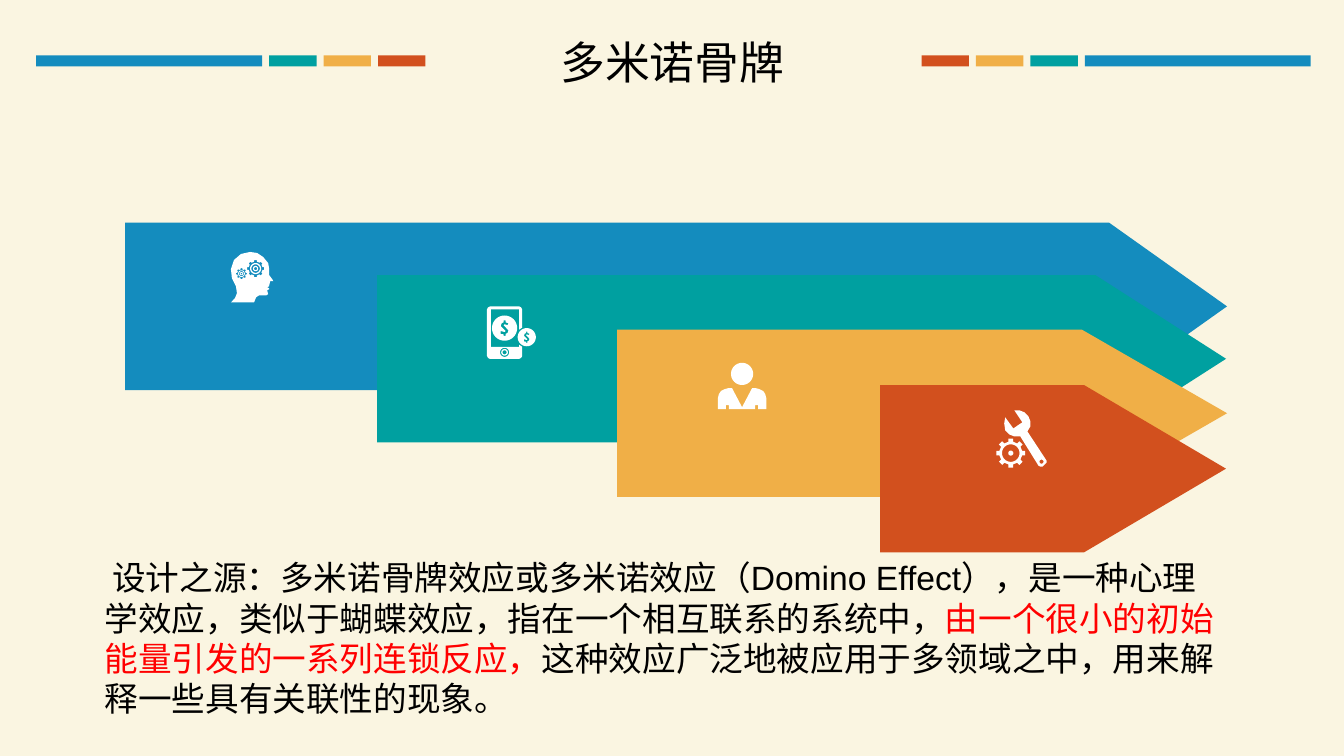
"""Build the domino effect slide: four stacked arrows with icons and an explanation."""
from dataclasses import dataclass
from math import cos, pi, sin

from lxml.etree import SubElement
from pptx import Presentation
from pptx.dml.color import RGBColor
from pptx.enum.shapes import MSO_SHAPE
from pptx.enum.text import MSO_ANCHOR, PP_ALIGN
from pptx.oxml.ns import qn
from pptx.shapes.autoshape import Shape
from pptx.shapes.shapetree import SlideShapes
from pptx.text.text import _Paragraph
from pptx.util import Pt

PX = 9144
CREAM = RGBColor(0xFA, 0xF5, 0xE1)
BLUE = RGBColor(0x14, 0x8C, 0xBE)
TEAL = RGBColor(0x00, 0xA0, 0xA0)
AMBER = RGBColor(0xF0, 0xAF, 0x47)
RUST = RGBColor(0xD2, 0x50, 0x1E)
WHITE = RGBColor(0xFF, 0xFF, 0xFF)
BLACK = RGBColor(0x00, 0x00, 0x00)
RED = RGBColor(0xFF, 0x00, 0x00)
CHINESE_FONT = "Noto Sans CJK SC"

Contour = list[tuple[float, float]]


@dataclass(frozen=True)
class Bar:
    left: int
    width: int
    colour: RGBColor


@dataclass(frozen=True)
class Arrow:
    left: int
    top: int
    width: int
    point: float
    colour: RGBColor
    icon: list[Contour]


@dataclass(frozen=True)
class Phrase:
    text: str
    font: str = "Arial"
    colour: RGBColor = BLACK


def circle(x: float, y: float, radius: float) -> Contour:
    steps = [2 * pi * step / 40 for step in range(40)]
    return [(x + radius * cos(a), y + radius * sin(a)) for a in steps]


def gear(x: float, y: float, tip: float, root: float) -> Contour:
    teeth = 8
    corners = ((-0.2, tip), (0.2, tip), (0.25, root), (0.75, root))
    turns = [(2 * pi * (tooth + part) / teeth, radius)
             for tooth in range(teeth) for part, radius in corners]
    return [(x + radius * cos(a), y + radius * sin(a)) for a, radius in turns]


def coin(x: float, y: float, radius: float) -> list[Contour]:
    dollar = [(1, 6), (1, 8), (-1, 8), (-1, 6.5), (-4, 6), (-4, 3), (0, 4), (1, 3),
              (-1, 1), (-4, -2), (-3, -5), (-1, -6), (-1, -8), (1, -8), (1, -6), (4, -5),
              (3, -3), (0, -4), (-1, -3), (1, -1), (4, 2.5), (3, 5)]
    scale = radius / 13
    return [circle(x, y, radius), [(x + dx * scale, y + dy * scale) for dx, dy in dollar]]


HEAD = [
    [(270, 277), (267, 273), (267, 267), (266, 261), (261, 255), (255, 251), (248, 250),
     (239, 252), (232, 258), (229, 267), (230, 276), (234, 284), (235, 291), (233, 296),
     (229, 300), (252, 300), (254, 295), (257, 293), (264, 293), (266, 292), (265, 288),
     (267, 287), (267, 286), (265, 285), (267, 284), (267, 283), (268, 279), (271, 279)],
    gear(253.5, 266.5, 8.5, 7),
    *[circle(253.5, 266.5, radius) for radius in (5.5, 4.2, 2.6, 1.5)],
    gear(239.5, 271.5, 5.5, 4.3),
    *[circle(239.5, 271.5, radius) for radius in (3.3, 2.5, 1.6, 0.8)],
]
PHONE = [
    [(515, 344), (487, 344), (487, 307), (515, 307), (515, 327), (518, 325), (518, 307),
     (517, 305), (515, 304), (486, 304), (484, 305), (483, 307), (483, 353), (484, 355),
     (486, 356), (515, 356), (517, 355), (518, 353), (518, 344), (515, 342)],
    *[circle(500.5, 349.5, radius) for radius in (4.5, 3.3, 2)],
    *coin(500.5, 325.5, 12.5),
    *coin(522.5, 334.5, 9),
]
PERSON = [
    circle(736, 371, 11),
    [(720, 406), (720, 402), (723, 402), (723, 406), (749, 406), (749, 402), (752, 402),
     (752, 406), (760, 406), (760, 395), (759, 391), (757, 388), (753, 386), (749, 385),
     (746, 385), (736, 404), (726, 385), (723, 385), (719, 386), (715, 388), (713, 391),
     (712, 395), (712, 406)],
]
TOOLS = [
    [(1038, 457), (1019, 428), (1022, 423), (1022, 418), (1020, 413), (1016, 409),
     (1011, 407), (1006, 407), (1014, 419), (1005, 425), (997, 414), (996, 420),
     (997, 427), (1001, 431), (1006, 433), (1012, 433), (1030, 462), (1032, 463),
     (1034, 463), (1037, 460), (1038, 459)],
    circle(1033, 458, 2),
    gear(1002.5, 449.5, 14.5, 11.5),
    circle(1002.5, 449.5, 8.7),
    circle(1002.5, 449.5, 2.5),
]
ARROWS = [
    Arrow(124, 221, 1093, 0.704, BLUE, HEAD),
    Arrow(374, 273, 842, 0.78, TEAL, PHONE),
    Arrow(612, 327, 605, 0.868, AMBER, PERSON),
    Arrow(873, 382, 343, 0.848, RUST, TOOLS),
]
BARS = [Bar(36, 224, BLUE)] + [
    Bar(267 + 54 * step, 47, colour) for step, colour in enumerate((TEAL, AMBER, RUST))
]
EXPLANATION = [
    Phrase(" ", "Noto Sans CJK JP"),
    Phrase("设计之源：", CHINESE_FONT),
    Phrase("多米诺骨牌效应或多米诺效应（Domino Effect），是一种心理学效应，"
           "类似于蝴蝶效应，指在一个相互联系的系统中，"),
    Phrase("由一个很小的初始能量引发的一系列连锁反应，", colour=RED),
    Phrase("这种效应广泛地被应用于多领域之中，用来解释一些具有关联性的现象。"),
]


def paint(shape: Shape, colour: RGBColor) -> None:
    shape.shadow.inherit = False
    shape.fill.solid()
    shape.fill.fore_color.rgb = colour
    shape.line.fill.background()


def draw_bar(shapes: SlideShapes, bar: Bar) -> None:
    for left in (bar.left, 1336 - bar.left - bar.width):
        paint(shapes.add_shape(MSO_SHAPE.RECTANGLE, left * PX, 55 * PX,
                               bar.width * PX, 11 * PX), bar.colour)


def draw_arrow(shapes: SlideShapes, arrow: Arrow) -> None:
    body = shapes.add_shape(MSO_SHAPE.PENTAGON, arrow.left * PX, arrow.top * PX,
                            arrow.width * PX, 166 * PX)
    body.adjustments[0] = arrow.point
    paint(body, arrow.colour)


def draw_icon(shapes: SlideShapes, contours: list[Contour]) -> None:
    scaled = [[(round(x * PX), round(y * PX)) for x, y in contour] for contour in contours]
    outline = shapes.build_freeform(*scaled[0][0])
    outline.add_line_segments(scaled[0][1:])
    for contour in scaled[1:]:
        outline.move_to(*contour[0])
        outline.add_line_segments(contour[1:])
    paint(outline.convert_to_shape(), WHITE)


def write(paragraph: _Paragraph, text: str, *, size: int, font: str = "Arial",
          colour: RGBColor = BLACK) -> None:
    run = paragraph.add_run()
    run.text = text
    run.font.size = Pt(size)
    run.font.color.rgb = colour
    run.font.name = font
    SubElement(run._r.get_or_add_rPr(), qn("a:ea")).set("typeface", CHINESE_FONT)


def main() -> None:
    deck = Presentation()
    deck.slide_width, deck.slide_height = 1333 * PX, 750 * PX
    slide = deck.slides.add_slide(deck.slide_layouts[5])
    slide.background.fill.solid()
    slide.background.fill.fore_color.rgb = CREAM

    heading = slide.shapes.title
    heading.left, heading.top, heading.width, heading.height = (
        546 * PX, 29 * PX, 242 * PX, 64 * PX)
    title = heading.text_frame
    title.margin_left = title.margin_right = 0
    title.word_wrap = False
    title.vertical_anchor = MSO_ANCHOR.MIDDLE
    title.paragraphs[0].alignment = PP_ALIGN.CENTER
    write(title.paragraphs[0], "多米诺骨牌", size=32)

    for bar in BARS:
        draw_bar(slide.shapes, bar)
    for arrow in ARROWS:
        draw_arrow(slide.shapes, arrow)
    for arrow in ARROWS:
        draw_icon(slide.shapes, arrow.icon)

    explanation = slide.shapes.add_textbox(94 * PX, 548 * PX, 1124 * PX, 200 * PX).text_frame
    explanation.word_wrap = True
    for phrase in EXPLANATION:
        write(explanation.paragraphs[0], phrase.text, size=24,
              font=phrase.font, colour=phrase.colour)
    deck.save("out.pptx")


if __name__ == "__main__":
    main()
